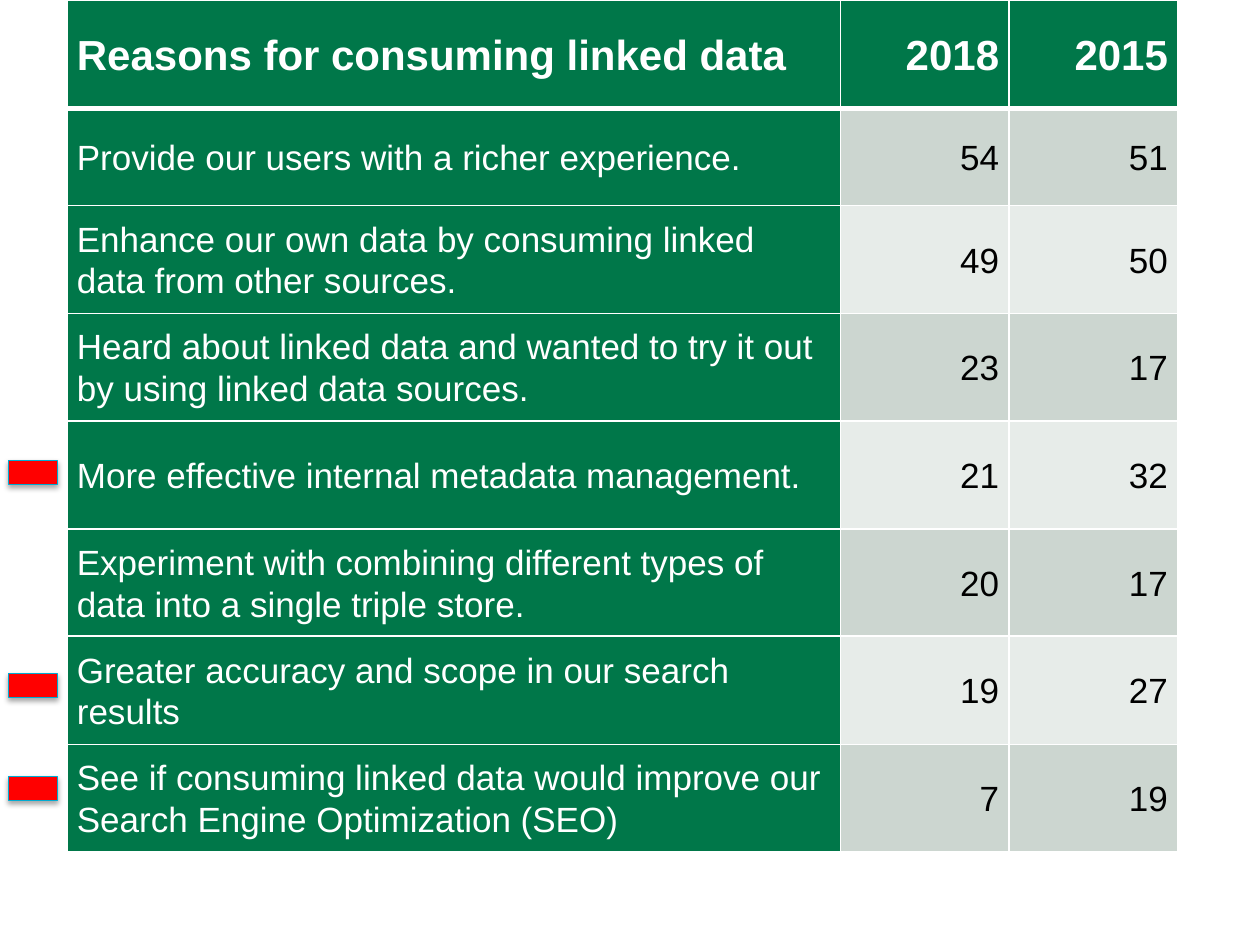
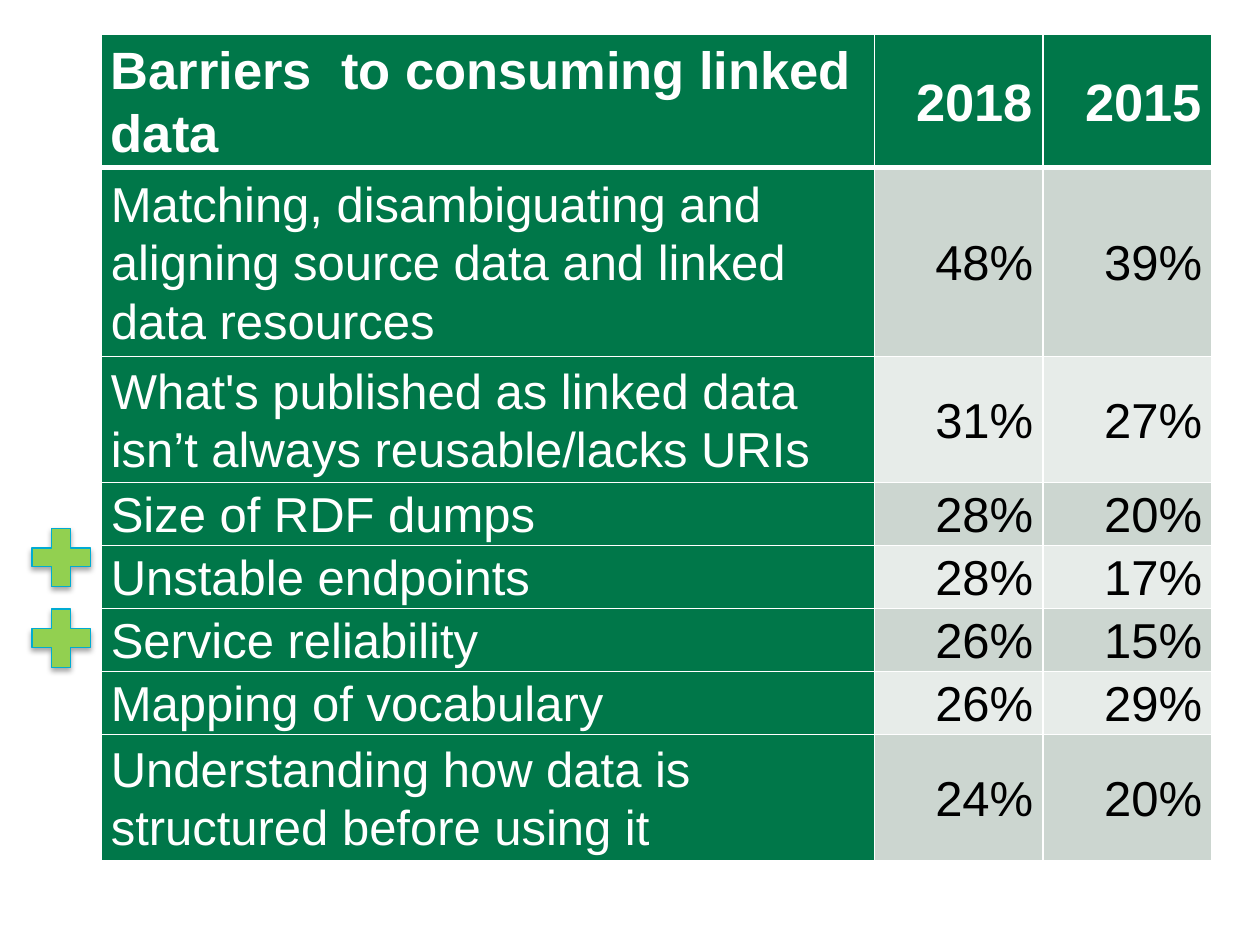
from lxml.etree import SubElement
from pptx import Presentation
from pptx.dml.color import RGBColor
from pptx.enum.shapes import MSO_SHAPE
from pptx.enum.text import MSO_ANCHOR, PP_ALIGN
from pptx.oxml.ns import qn
from pptx.util import Inches, Pt

WHITE, BLACK, GREEN = "FFFFFF", "000000", "007749"
BANDS = ("CCD6D0", "E7ECE9")
RED, LIME, CYAN = "FF0000", "92D050", "00ABD2"
COLS = (6.14, 1.34, 1.34)
YEARS = ("2018", "2015")

REASONS = [
    ("Reasons for consuming linked data", *YEARS),
    ("Provide our users with a richer experience.", "54", "51"),
    ("Enhance our own data by consuming linked data from other sources.", "49", "50"),
    ("Heard about linked data and wanted to try it out by using linked data sources.", "23", "17"),
    ("More effective internal metadata management.", "21", "32"),
    ("Experiment with combining different types of data into a single triple store.", "20", "17"),
    ("Greater accuracy and scope in our search results", "19", "27"),
    ("See if consuming linked data would improve our Search Engine Optimization (SEO)", "7", "19"),
]
BARRIERS = [
    ("Barriers  to consuming linked data", *YEARS),
    ("Matching, disambiguating and aligning source data and linked data resources", "48%", "39%"),
    ("What's published as linked data isn’t always reusable/lacks URIs", "31%", "27%"),
    ("Size of RDF dumps", "28%", "20%"),
    ("Unstable endpoints", "28%", "17%"),
    ("Service reliability", "26%", "15%"),
    ("Mapping of vocabulary", "26%", "29%"),
    ("Understanding how data is structured before using it", "24%", "20%"),
]


def color(text):
    """Turn a hex string into a colour."""
    return RGBColor.from_string(text)


class Deck:
    """Hold the shared style and the current slide."""

    def __init__(self):
        """Start an empty 4:3 deck."""
        self.prs = Presentation()
        self.prs.slide_width, self.prs.slide_height = Inches(10), Inches(7.5)
        self.font = "Arial"

    def page(self):
        """Add a blank slide and make it current."""
        self.slide = self.prs.slides.add_slide(self.prs.slide_layouts[6])

    def edge(self, cell, side, width):
        """Draw one white border of a cell."""
        line = SubElement(cell._tc.get_or_add_tcPr(), qn(f"a:ln{side}"), w=str(Pt(width)))
        fill = SubElement(line, qn("a:solidFill"))
        SubElement(fill, qn("a:srgbClr"), val=WHITE)

    def cell(self, cell, text, row, col, size):
        """Fill and format one table cell."""
        head = row == 0
        label = head or col == 0
        for side in "LRTB":
            thick = (side, row) in (("B", 0), ("T", 1))
            self.edge(cell, side, 3 if thick else 1)
        cell.fill.solid()
        cell.fill.fore_color.rgb = color(GREEN if label else BANDS[(row - 1) % 2])
        cell.vertical_anchor = MSO_ANCHOR.MIDDLE
        cell.margin_left = cell.margin_right = Inches(0.08)
        cell.margin_top = cell.margin_bottom = 0
        para = cell.text_frame.paragraphs[0]
        para.text = text
        para.line_spacing = 1.07
        para.alignment = PP_ALIGN.RIGHT if col else PP_ALIGN.LEFT
        font = para.runs[0].font
        font.name, font.size, font.bold = self.font, Pt(size), head
        font.color.rgb = color(WHITE if label else BLACK)

    def table(self, left, top, rows, heights, sizes):
        """Add a table with a green header row and label column."""
        frame = self.slide.shapes.add_table(
            len(rows), len(COLS), Inches(left), Inches(top),
            Inches(sum(COLS)), Inches(sum(heights)))
        grid = frame.table
        for col, width in zip(grid.columns, COLS):
            col.width = Inches(width)
        for r, (row, height) in enumerate(zip(rows, heights)):
            grid.rows[r].height = Inches(height)
            for c, text in enumerate(row):
                self.cell(grid.cell(r, c), text, r, c, sizes[min(r, 1)])

    def mark(self, kind, left, top, width, height, fill):
        """Add a trend sign with a soft shadow below it."""
        sign = self.slide.shapes.add_shape(
            kind, Inches(left), Inches(top), Inches(width), Inches(height))
        sign.fill.solid()
        sign.fill.fore_color.rgb = color(fill)
        sign.line.color.rgb = color(CYAN)
        sign.line.width = Pt(0.75)
        sign.shadow.inherit = False
        glow = sign._element.spPr.find(qn("a:effectLst"))
        shade = SubElement(glow, qn("a:outerShdw"), blurRad=str(Pt(3.1)),
                           dist=str(Pt(1.8)), dir="5400000", rotWithShape="0")
        tint = SubElement(shade, qn("a:srgbClr"), val=BLACK)
        SubElement(tint, qn("a:alpha"), val="35000")


def main():
    """Build both slides and save them."""
    deck = Deck()
    deck.page()
    deck.table(0.53, 0, REASONS, [0.86, 0.77] + [0.86, 0.85] * 3, (24, 20))
    for top in (5.86, 3.35, 5.04):
        deck.mark(MSO_SHAPE.MATH_MINUS, 0, top, 0.53, 0.8, RED)
    deck.page()
    deck.table(0.8, 0.27, BARRIERS, [1.06, 1.5, 1] + [0.5] * 4 + [1], (30, 28))
    for top in (4.11, 4.75):
        deck.mark(MSO_SHAPE.MATH_PLUS, 0.17, top, 0.63, 0.63, LIME)
    deck.prs.save("out.pptx")


if __name__ == "__main__":
    main()
